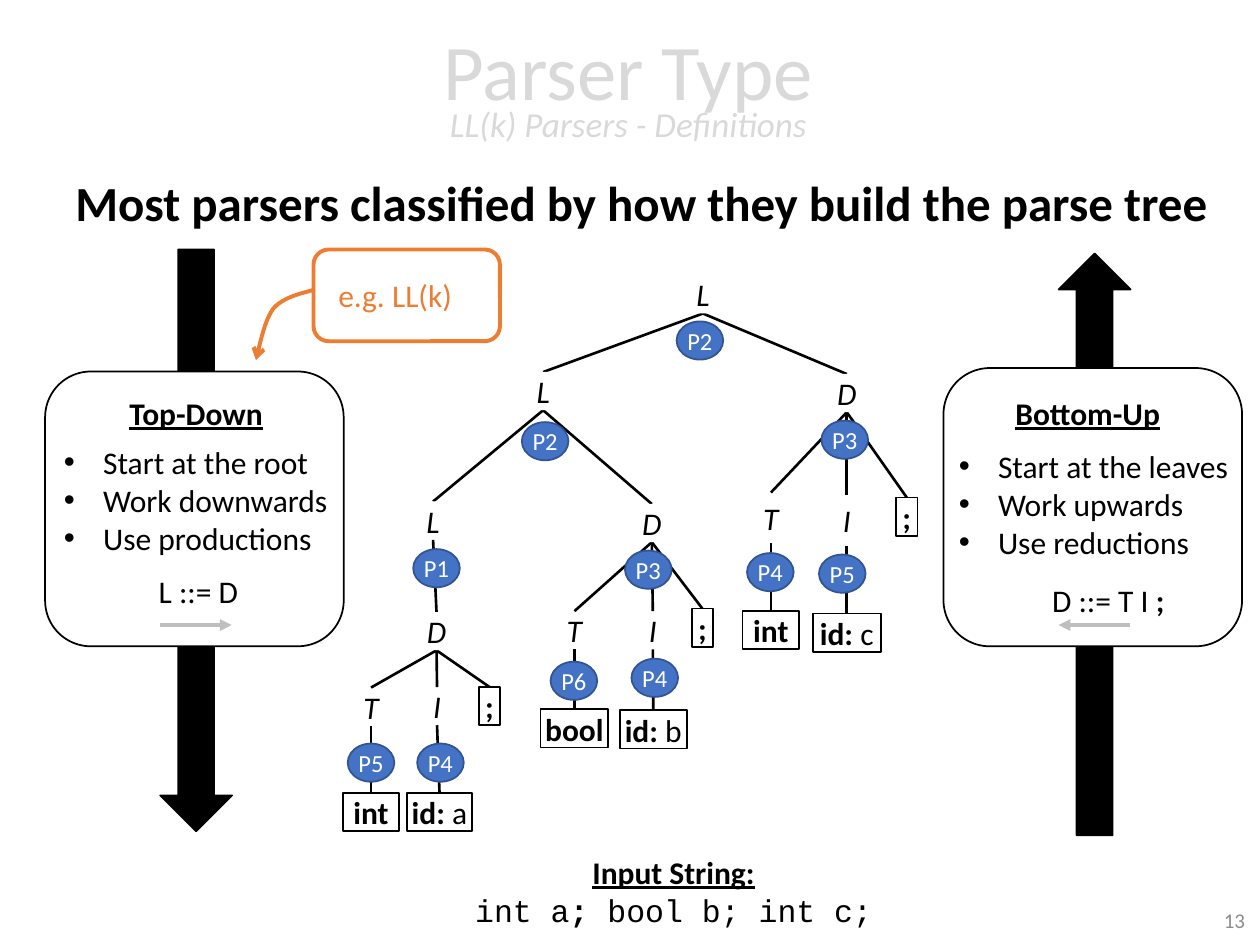
from dataclasses import dataclass

from lxml.etree import SubElement
from pptx import Presentation
from pptx.dml.color import RGBColor as RGB
from pptx.enum.shapes import MSO_CONNECTOR as LINE, MSO_SHAPE as SHAPE
from pptx.enum.text import MSO_ANCHOR as ANCHOR, PP_ALIGN as ALIGN
from pptx.oxml.ns import qn
from pptx.util import Cm, Pt


@dataclass(frozen=True)
class Theme:
    font: str = "Calibri"
    mono: str = "Courier New"
    black: str = "000000"
    white: str = "FFFFFF"
    faded: str = "D9D9D9"
    grey: str = "BFBFBF"
    number: str = "8C8C8C"
    orange: str = "ED7D31"
    blue: str = "4472C4"
    navy: str = "325491"
    title: int = 45
    subtitle: int = 20
    lead: int = 28
    body: int = 18
    badge: int = 14
    small: int = 12


T = Theme()
BOLD, ITALIC, PLAIN = {"bold": True}, {"italic": True}, {}
HEADING = {"bold": True, "underline": True}

prs = Presentation()
prs.slide_width, prs.slide_height = Cm(25.4), Cm(19.05)
s = prs.slides.add_slide(prs.slide_layouts[6])


def block(kind, x, y, w, h, fill=None, line=None, weight=1):
    """Add a preset shape in centimetres, or a text box if kind is None."""
    box = [Cm(v) for v in (x, y, w, h)]
    if kind is None:
        return s.shapes.add_textbox(*box)
    sp = s.shapes.add_shape(kind, *box)
    sp.shadow.inherit = False
    if fill:
        sp.fill.solid()
        sp.fill.fore_color.rgb = RGB.from_string(fill)
    else:
        sp.fill.background()
    if line:
        sp.line.color.rgb = RGB.from_string(line)
        sp.line.width = Pt(weight)
    else:
        sp.line.fill.background()
    return sp


def write(sp, paragraphs, size=T.body, color=T.black, align=ALIGN.LEFT,
          anchor=ANCHOR.TOP, inset=None, spacing=None, wrap=False, bullet=False):
    """Fill a shape with paragraphs, each a list of (text, font attributes)."""
    tf = sp.text_frame
    tf.word_wrap, tf.vertical_anchor = wrap, anchor
    if inset is not None:
        tf.margin_left = tf.margin_right = Cm(inset)
        tf.margin_top = tf.margin_bottom = 0
    for i, runs in enumerate(paragraphs):
        p = tf.add_paragraph() if i else tf.paragraphs[0]
        p.alignment, p.line_spacing = align, spacing
        if bullet:
            pPr = p._p.get_or_add_pPr()
            pPr.set("marL", str(Cm(0.79)))
            pPr.set("indent", str(-Cm(0.79)))
            SubElement(pPr, qn("a:buFont"), typeface="Arial")
            SubElement(pPr, qn("a:buChar"), char="•")
        for text, look in runs:
            if text == "\n":
                p.add_line_break()
                continue
            r = p.add_run()
            r.text = text
            r.font.color.rgb = RGB.from_string(color)
            for key, value in {"name": T.font, "size": Pt(size), **look}.items():
                setattr(r.font, key, value)


# Title, lead sentence, slide number and input string
write(block(None, 0.3, 0.08, 24.74, 3.68),
      [[("Parser Type", PLAIN), ("\n", PLAIN),
        ("LL(k) Parsers - Definitions", {"size": Pt(T.subtitle), "italic": True})]],
      size=T.title, color=T.faded, align=ALIGN.CENTER, anchor=ANCHOR.MIDDLE,
      spacing=0.7, wrap=True)
write(block(None, 1.27, 3.48, 23.42, 1.55),
      [[("Most parsers classified by how they build the parse tree", BOLD)]],
      size=T.lead, spacing=0.9, wrap=True)
write(block(None, 19.63, 18.03, 5.72, 1.02), [[("13", PLAIN)]], size=T.small,
      color=T.number, align=ALIGN.RIGHT, anchor=ANCHOR.MIDDLE, wrap=True)
MONO = {"name": T.mono}
write(block(None, 9.3, 17.07, 8.56, 1.8),
      [[("Input String:", HEADING)],
       [("int a", MONO), (";", {**MONO, "bold": True}), (" bool b; int c;", MONO)]],
      align=ALIGN.CENTER)

# Callout with its curved arrow
callout = block(SHAPE.ROUNDED_RECTANGLE, 6.32, 5.03, 3.76, 1.85, T.white, T.orange, 2.25)
write(callout, [[("e.g. LL(k)", PLAIN)]], color=T.orange, anchor=ANCHOR.MIDDLE, inset=0.41)

# Direction arrows and the two method panels
panels = [
    # arrow x, y, turn; panel x, y, h; heading x, w; list x, y, w; rule x, y, w
    (3.23, 5.03, 0, 0.91, 7.49, 5.54, 2.36, 3.23, 1.04, 8.81, 5.89, 2.95, 11.4, 2.13,
     "Top-Down", ["Start at the root", "Work downwards", "Use productions"],
     [("L ::= D", PLAIN)]),
    (21.34, 5.11, 180, 19.02, 7.42, 5.61, 20.22, 3.48, 19.08, 8.89, 5.99, 20.96, 11.58, 2.82,
     "Bottom-Up", ["Start at the leaves", "Work upwards", "Use reductions"],
     [("D ::= T I ", PLAIN), (";", BOLD)]),
]
for (ax, ay, turn, px, py, ph, hx, hw, lx, ly, lw, rx, ry, rw,
     heading, points, rule) in panels:
    block(SHAPE.DOWN_ARROW, ax, ay, 1.45, 11.73, T.black, T.black).rotation = turn
    block(SHAPE.ROUNDED_RECTANGLE, px, py, 6.02, ph, T.white, T.black)
    write(block(None, hx, 7.82, hw, 1.02), [[(heading, HEADING)]])
    write(block(None, lx, ly, lw, 2.57), [[(t, PLAIN)] for t in points], bullet=True)
    write(block(None, rx, ry, rw, 1.02), [rule])

# Parse tree: key -> centre x, top, width, height; the key starts with the symbol
ROW = 0.77
nodes = {
    "L": (14.17, 5.55, 0.28, ROW),
    "L ab": (10.95, 7.5, 0.28, ROW), "D c": (17.07, 7.54, 0.41, ROW),
    "L a": (8.73, 10.11, 0.28, ROW), "D b": (13.14, 10.16, 0.41, ROW),
    "D a": (8.8, 12.34, 0.41, ROW),
    "T a": (7.48, 13.86, 0.3, ROW), "I a": (8.81, 13.85, 0.15, ROW),
    "T b": (11.58, 12.32, 0.3, ROW), "I b": (13.16, 12.32, 0.15, ROW),
    "T c": (15.54, 9.93, 0.3, 1.02), "I c": (17.07, 9.98, 0.15, 1.02),
    "; a": (9.87, 13.85, 0.43, ROW), "; b": (14.16, 12.27, 0.43, ROW),
    "; c": (18.28, 10.03, 0.43, ROW),
    "int a": (7.48, 15.98, 1.14, ROW), "id: a": (8.86, 15.98, 1.32, ROW),
    "bool b": (11.58, 14.3, 1.37, ROW), "id: b": (13.17, 14.32, 1.35, ROW),
    "int c": (15.54, 12.32, 1.14, ROW), "id: c": (17.07, 12.37, 1.37, ROW),
}
children = {
    "L": ["L ab", "D c"], "L ab": ["L a", "D b"], "L a": ["D a"],
    "D a": ["T a", "I a", "; a"], "T a": ["int a"], "I a": ["id: a"],
    "D b": ["T b", "I b", "; b"], "T b": ["bool b"], "I b": ["id: b"],
    "D c": ["T c", "I c", "; c"], "T c": ["int c"], "I c": ["id: c"],
}

# Tree edges, and the grey arrows under the grammar rules
lines = [(3.23, 12.6, 4.67, 12.6, T.grey, 2.25), (22.78, 12.6, 21.34, 12.6, T.grey, 2.25)]
for parent, kids in children.items():
    x, y, _, h = nodes[parent]
    lines += [(x, y + h, *nodes[kid][:2], T.black, 1.5) for kid in kids]
for x1, y1, x2, y2, color, weight in lines:
    c = s.shapes.add_connector(LINE.STRAIGHT, Cm(x1), Cm(y1), Cm(x2), Cm(y2))
    c.line.color.rgb = RGB.from_string(color)
    c.line.width = Pt(weight)
    spPr = c._element.spPr
    if color == T.grey:
        SubElement(spPr.find(qn("a:ln")), qn("a:tailEnd"), type="triangle")
    SubElement(spPr, qn("a:effectLst"))

# Tree symbols: inner ones in italics, terminals framed and bold
for key, (x, y, w, h) in nodes.items():
    symbol, _, name = key.partition(" ")
    inner = key in children
    runs = [(symbol, ITALIC if inner else BOLD)]
    if symbol == "id:":
        runs = [("id: ", BOLD), (name, PLAIN)]
    sp = block(SHAPE.RECTANGLE, x - w / 2, y, w, h,
               None if symbol in "TI" else T.white, None if inner else T.black)
    write(sp, [runs], align=ALIGN.CENTER, anchor=ANCHOR.MIDDLE, inset=0)

# Production badges: centre x, top
badges = [
    ("P2", 14.11, 6.48), ("P2", 10.99, 8.51), ("P3", 17.03, 8.48), ("P1", 8.8, 11.07),
    ("P3", 13.07, 11.1), ("P4", 15.53, 11.15), ("P5", 16.98, 11.18), ("P6", 11.57, 13.34),
    ("P4", 13.2, 13.28), ("P5", 7.48, 14.99), ("P4", 8.88, 14.99),
]
for label, x, y in badges:
    write(block(SHAPE.OVAL, x - 0.47, y, 0.94, ROW, T.blue, T.navy), [[(label, PLAIN)]],
          size=T.badge, color=T.white, align=ALIGN.CENTER, anchor=ANCHOR.MIDDLE, inset=0)

# Curved arrow, sampled from two cubic Bézier pieces
STEPS = 12
curves = [[(6.35, 5.84), (6.05, 5.92), (5.72, 5.99), (5.51, 6.22)],
          [(5.51, 6.22), (5.33, 6.48), (5.26, 6.86), (5.16, 7.26)]]
points = []
for a, b, c, d in curves:
    for t in [i / STEPS for i in range(1, STEPS + 1)]:
        u = 1 - t
        points.append([Cm(u**3 * a[k] + 3 * u * u * t * b[k] + 3 * u * t * t * c[k] + t**3 * d[k])
                       for k in (0, 1)])
path = s.shapes.build_freeform(Cm(6.35), Cm(5.84))
path.add_line_segments(points, close=False)
sp = path.convert_to_shape()
sp.shadow.inherit = False
sp.fill.background()
sp.line.color.rgb = RGB.from_string(T.orange)
sp.line.width = Pt(2.25)
SubElement(sp._element.spPr.find(qn("a:ln")), qn("a:tailEnd"), type="arrow")

prs.save("out.pptx")
